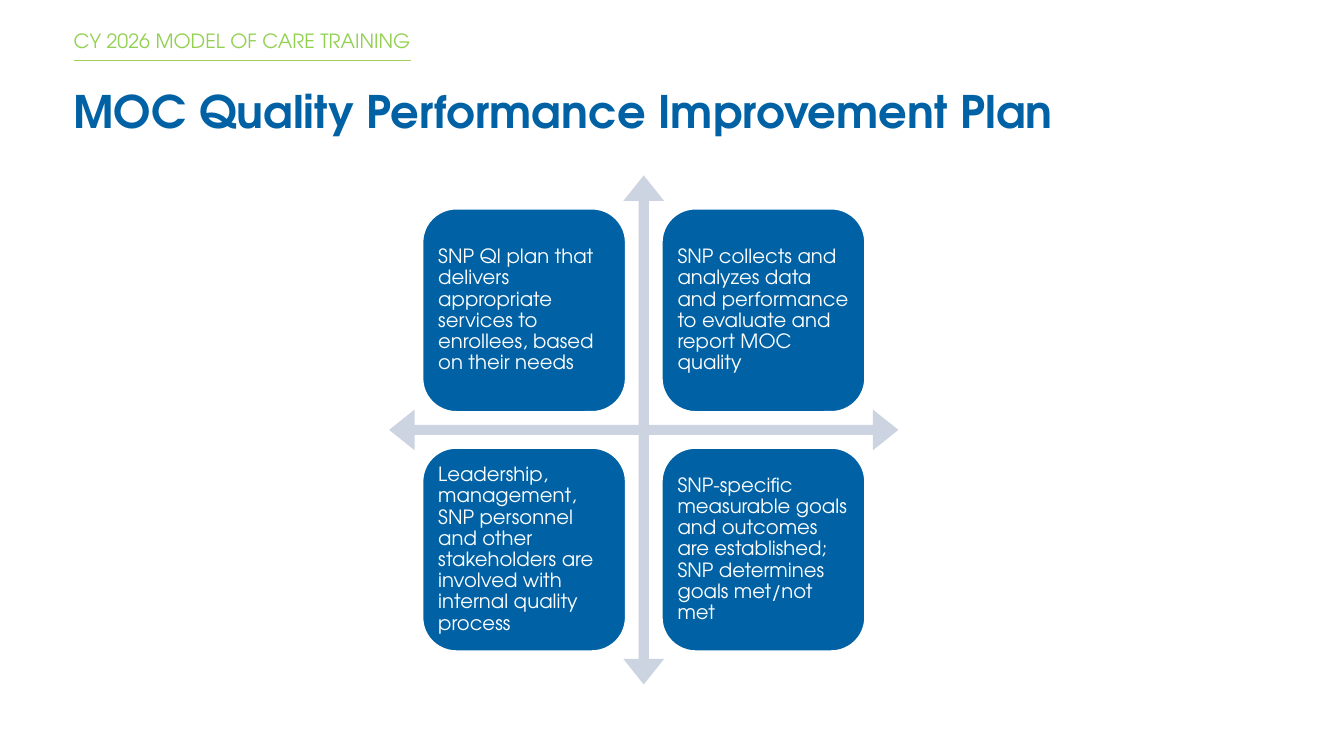
from dataclasses import dataclass

from lxml import etree
from pptx import Presentation
from pptx.dml.color import RGBColor
from pptx.enum.shapes import MSO_CONNECTOR, MSO_SHAPE
from pptx.enum.text import MSO_ANCHOR, PP_ALIGN
from pptx.oxml.ns import qn
from pptx.util import Inches, Pt

STRAIGHT = MSO_CONNECTOR.STRAIGHT
QUAD_ARROW = MSO_SHAPE.QUAD_ARROW
ROUNDED = MSO_SHAPE.ROUNDED_RECTANGLE
TOP, MIDDLE = MSO_ANCHOR.TOP, MSO_ANCHOR.MIDDLE
LEFT = PP_ALIGN.LEFT


@dataclass(frozen=True)
class Theme:
    font: str = "TeX Gyre Adventor"
    blue: RGBColor = RGBColor(0x00, 0x62, 0xA5)
    green: RGBColor = RGBColor(0x92, 0xD0, 0x50)
    rule: RGBColor = RGBColor(0xA3, 0xCF, 0x5F)
    arrow: RGBColor = RGBColor(0xCC, 0xD3, 0xE1)
    white: RGBColor = RGBColor(0xFF, 0xFF, 0xFF)
    title_size: Pt = Pt(32)
    text_size: Pt = Pt(14)


theme = Theme()


def write_text(shape, text, size, color, anchor, inset=0, bold=False, spacing=0.9):
    frame = shape.text_frame
    frame.word_wrap = True
    frame.vertical_anchor = anchor
    frame.margin_left = frame.margin_right = Inches(inset)
    frame.margin_top = frame.margin_bottom = Inches(inset)
    paragraph = frame.paragraphs[0]
    paragraph.text = text
    paragraph.alignment = LEFT
    paragraph.line_spacing = spacing
    paragraph.font.name = theme.font
    paragraph.font.size = size
    paragraph.font.bold = bold
    paragraph.font.color.rgb = color


presentation = Presentation()
presentation.slide_width = Inches(13.33)
presentation.slide_height = Inches(7.5)
slide = presentation.slides.add_slide(presentation.slide_layouts[6])
shapes = slide.shapes

# Heading
margin = Inches(0.73)
header_width = Inches(3.35)
rule_y = Inches(0.6)
rule = shapes.add_connector(STRAIGHT, margin, rule_y, margin + header_width, rule_y)
rule.line.color.rgb = theme.rule
rule.line.width = Pt(1)
etree.SubElement(rule._element.spPr, qn("a:effectLst"))

header = shapes.add_textbox(margin, Inches(0.11), header_width, Inches(0.48))
write_text(header, "CY 2026 MODEL OF CARE TRAINING", theme.text_size, theme.green, MIDDLE)
header.text_frame.margin_top = Pt(10)

title = shapes.add_textbox(margin, Inches(0.83), Inches(12.47), Inches(1.39))
write_text(title, "MOC Quality Performance Improvement Plan", theme.title_size,
           theme.blue, TOP, bold=True, spacing=1.0)

# Four-way arrow, with one tile in each quadrant
matrix_left, matrix_top, matrix_size = Inches(3.86), Inches(1.74), Inches(5.05)
cross = shapes.add_shape(QUAD_ARROW, matrix_left, matrix_top, matrix_size, matrix_size)
cross.shadow.inherit = False
for index, share in enumerate((0.02, 0.04, 0.05)):
    cross.adjustments[index] = share
cross.fill.solid()
cross.fill.fore_color.rgb = theme.arrow
cross.line.fill.background()

tile_size = int(matrix_size * 0.4)
tile_offset = int(matrix_size * 0.065)
tile_pitch = int(matrix_size * 0.47)
tile_rows = (
    ("SNP QI plan that delivers appropriate services to enrollees, based on their needs",
     "SNP collects and analyzes data and performance to evaluate and report MOC quality"),
    ("Leadership, management, SNP personnel and other stakeholders are involved with "
     "internal quality process",
     "SNP-specific measurable goals and outcomes are established; SNP determines goals "
     "met/not met"),
)
for row, texts in enumerate(tile_rows):
    for column, text in enumerate(texts):
        tile = shapes.add_shape(
            ROUNDED,
            matrix_left + tile_offset + column * tile_pitch,
            matrix_top + tile_offset + row * tile_pitch,
            tile_size, tile_size)
        tile.shadow.inherit = False
        tile.fill.solid()
        tile.fill.fore_color.rgb = theme.blue
        tile.line.color.rgb = theme.white
        tile.line.width = Pt(1.5)
        write_text(tile, text, theme.text_size, theme.white, MIDDLE, inset=0.06)

presentation.save("out.pptx")
